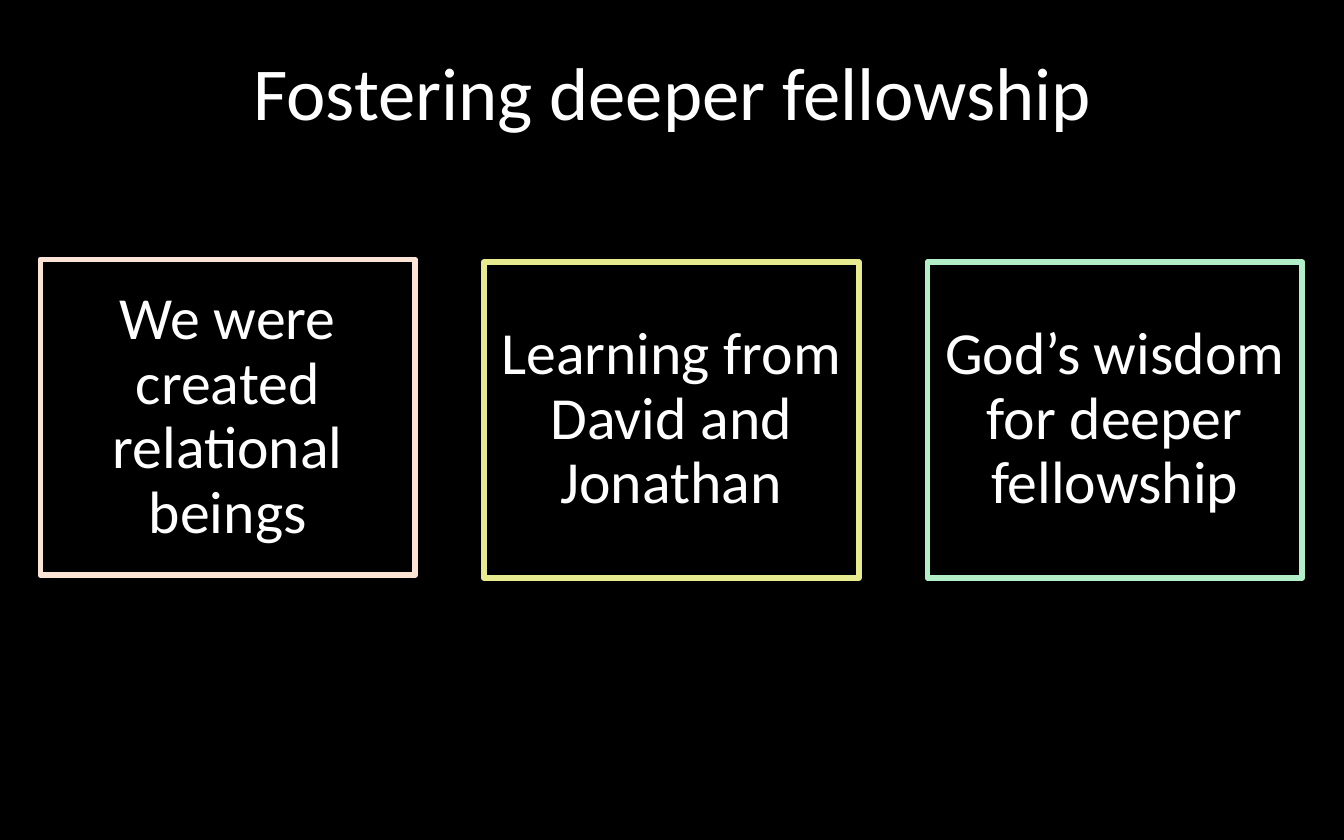
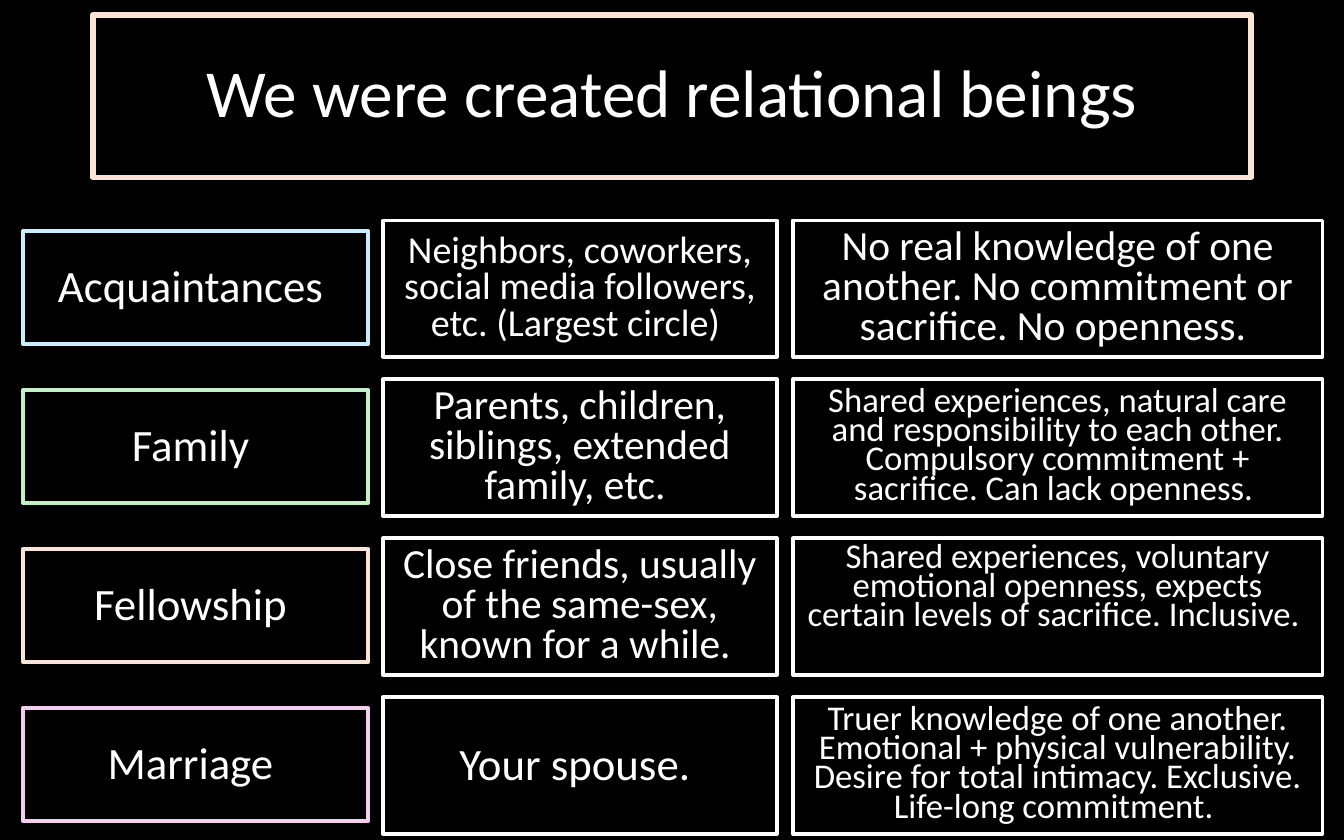
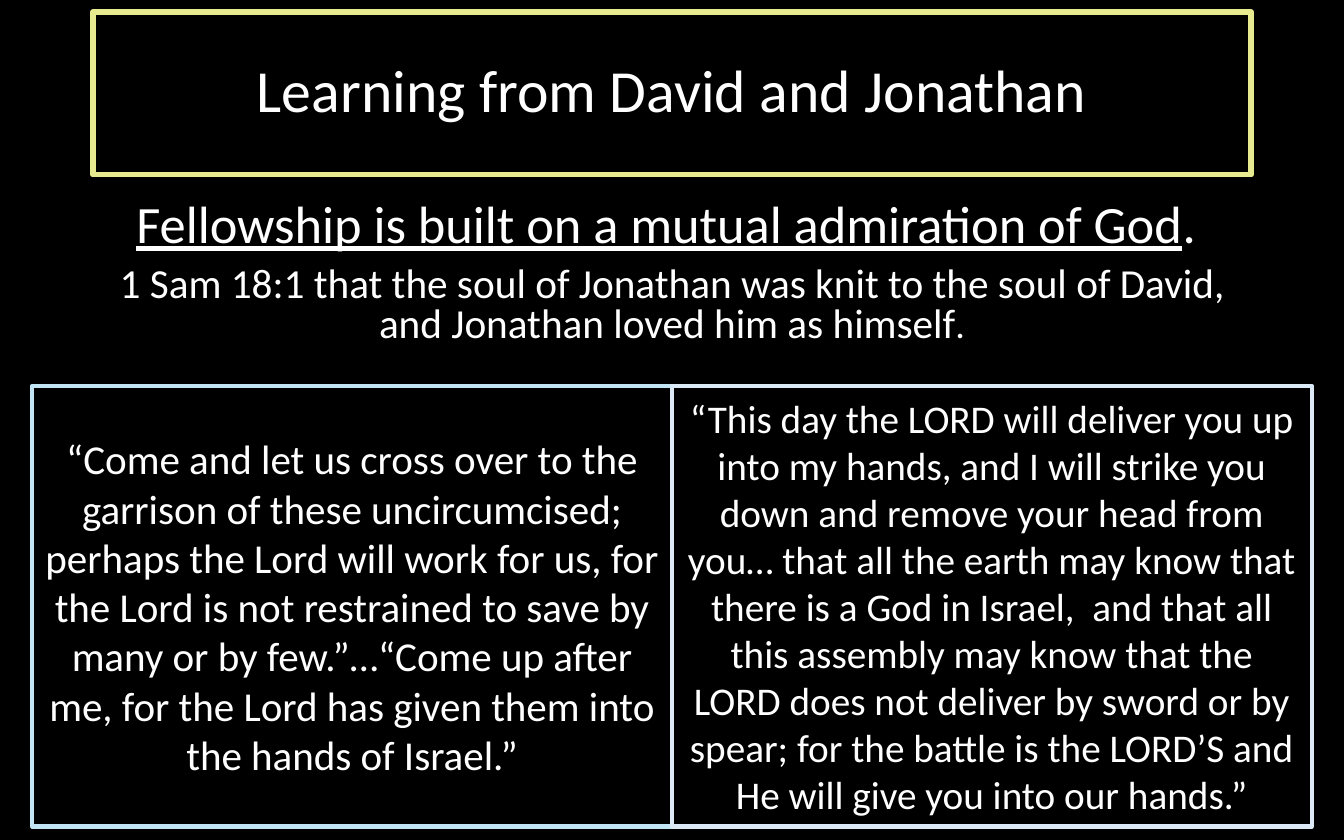
from dataclasses import dataclass
from typing import Optional

from lxml.etree import SubElement
from pptx import Presentation
from pptx.dml.color import RGBColor
from pptx.enum.shapes import MSO_SHAPE as Preset
from pptx.enum.text import MSO_ANCHOR as Anchor, MSO_AUTO_SIZE as AutoSize, PP_ALIGN as Align
from pptx.oxml.ns import qn
from pptx.util import Inches, Pt

COLORS = {
    "black": "000000",
    "white": "FFFFFF",
    "peach": "FBE3D6",
    "yellow": "E7EA8E",
    "mint": "B2EEC7",
    "sky": "CAEEFB",
    "green": "C2F1C8",
    "pink": "F2CFEE",
    "blue": "C1E5F5",
    "pale blue": "DCEAF7",
}
FONT = "Calibri"
WIDTH, HEIGHT = Inches(10), Inches(6.25)
COLUMNS, ROWS = 100, 62.5
TITLE_AND_CONTENT = 1


@dataclass(frozen=True)
class Frame:
    column: float
    row: float
    columns: float
    rows: float


@dataclass(frozen=True)
class Span:
    text: str
    size: float
    underline: bool = False


@dataclass(frozen=True)
class Panel:
    frame: Frame
    paragraphs: list[list[Span]]
    border: Optional[str] = None
    border_width: float = 2
    spacing: float = 0.9
    before: float = 7.5
    anchor: Anchor = Anchor.MIDDLE


@dataclass(frozen=True)
class Note:
    text: str
    size: float
    spacing: float
    anchor: Anchor = Anchor.MIDDLE


@dataclass(frozen=True)
class Circle:
    name: str
    color: str
    people: Note
    traits: Note


CIRCLES = [
    Circle(
        "Acquaintances ", "sky",
        Note("Neighbors, coworkers, social media followers, etc. (Largest circle) ", 20.4, 0.8),
        Note("No real knowledge of one another. No commitment or sacrifice. No openness. ", 22.2, 0.8),
    ),
    Circle(
        "Family ", "green",
        Note("Parents, children, siblings, extended family, etc. ", 22.2, 0.8),
        Note("Shared experiences, natural care and responsibility to each other. "
             "Compulsory commitment + sacrifice. Can lack openness. ", 18.6, 0.7),
    ),
    Circle(
        "Fellowship ", "peach",
        Note("Close friends, usually of the same-sex, known for a while. ", 22.2, 0.8),
        Note("Shared experiences, voluntary emotional openness, expects certain levels "
             "of sacrifice. Inclusive. ", 18.6, 0.7, Anchor.TOP),
    ),
    Circle(
        "Marriage ", "pink",
        Note("Your spouse. ", 24, 0.9),
        Note("Truer knowledge of one another. Emotional + physical vulnerability. "
             "Desire for total intimacy. Exclusive. Life-long commitment. ", 18.6, 0.7),
    ),
]


def write(shape, panel: Panel) -> None:
    frame = shape.text_frame
    frame.word_wrap = True
    frame.auto_size = AutoSize.NONE
    frame.vertical_anchor = panel.anchor
    frame.text = "\n".join(spans[0].text for spans in panel.paragraphs)
    for para, spans in zip(frame.paragraphs, panel.paragraphs):
        para.alignment = Align.CENTER
        para.line_spacing = panel.spacing
        para.space_before = Pt(panel.before)
        if shape.is_placeholder:
            properties = para._p.get_or_add_pPr()
            properties.set("marL", "0")
            properties.set("indent", "0")
            SubElement(properties, qn("a:buNone"))
        for span in spans[1:]:
            para.add_run().text = span.text
        for run, span in zip(para.runs, spans):
            run.font.name = FONT
            run.font.size = Pt(span.size)
            run.font.underline = span.underline
            run.font.color.rgb = RGBColor.from_string(COLORS["white"])


def draw(page, panel: Panel, holder=None) -> None:
    grid = panel.frame
    place = (
        int(WIDTH * grid.column / COLUMNS),
        int(HEIGHT * grid.row / ROWS),
        int(WIDTH * grid.columns / COLUMNS),
        int(HEIGHT * grid.rows / ROWS),
    )
    if holder is None:
        box = page.shapes.add_shape(Preset.RECTANGLE, *place)
        box.shadow.inherit = False
    else:
        box = holder
        box.left, box.top, box.width, box.height = place
    box.fill.background()
    if panel.border:
        box.line.color.rgb = RGBColor.from_string(COLORS[panel.border])
        box.line.width = Pt(panel.border_width)
    write(box, panel)


def add_page(deck, title: str, size: float, row: float = 1.1,
             border: Optional[str] = None, before: float = 7.5):
    page = deck.slides.add_slide(deck.slide_layouts[TITLE_AND_CONTENT])
    heading = Panel(Frame(6.9, row, 86.2, 12.1), [[Span(title, size)]], border, 3, before=before)
    draw(page, heading, page.shapes.title)
    return page


def draw_all(page, panels: list[Panel]) -> None:
    holders = [page.placeholders[1]] + [None] * (len(panels) - 1)
    for panel, holder in zip(panels, holders):
        draw(page, panel, holder)


def build_overview(deck) -> None:
    page = add_page(deck, "Fostering deeper fellowship", 40, before=0)
    topics = [
        ("We were created relational beings", "peach", 19.3),
        ("Learning from David and Jonathan", "yellow", 19.5),
        ("God’s wisdom for deeper fellowship", "mint", 19.5),
    ]
    draw_all(page, [
        Panel(Frame(3 + 33 * index, row, 27.9, 23.5), [[Span(text, 32)]], color, 3)
        for index, (text, color, row) in enumerate(topics)
    ])


def build_circles(deck) -> None:
    page = add_page(deck, "We were created relational beings", 36, border="peach")
    step = 11.83
    labels, details = [], []
    for index, circle in enumerate(CIRCLES):
        shift = index * step
        labels.append(Panel(Frame(1.7, 17.2 + shift, 25.7, 8.4),
                            [[Span(circle.name, 24)]], circle.color))
        for note, column, columns in ((circle.people, 28.5, 29.3), (circle.traits, 59, 39.4)):
            details.append(Panel(Frame(column, 16.4 + shift, columns, 10.15),
                                 [[Span(note.text, note.size)]], "white",
                                 spacing=note.spacing, anchor=note.anchor))
    draw_all(page, labels + details)


def build_friends(deck) -> None:
    page = add_page(deck, "Learning from David and Jonathan", 32, 0.9, "yellow")
    lesson = Panel(
        Frame(6.9, 14.6, 86.2, 12.1),
        [
            [Span("Fellowship is built on a mutual admiration of God", 28.1, True),
             Span(". ", 28.1)],
            [Span("1 Sam 18:1 that the soul of Jonathan was knit to the soul of David, "
                  "and Jonathan loved him as himself", 22.1),
             Span(".", 20.4)],
        ],
        spacing=0.8, anchor=Anchor.TOP,
    )
    quotes = [
        ("“Come and let us cross over to the garrison of these uncircumcised; "
         "perhaps the Lord will work for us, for the Lord is not restrained to save "
         "by many or by few.”…“Come up after me, for the Lord has given them into "
         "the hands of Israel.”", 22, "blue"),
        ("“This day the LORD will deliver you up into my hands, and I will strike you "
         "down and remove your head from you… that all the earth may know that there "
         "is a God in Israel,  and that all this assembly may know that the LORD does "
         "not deliver by sword or by spear; for the battle is the LORD’S and He will "
         "give you into our hands.”", 21, "pale blue"),
    ]
    draw_all(page, [lesson] + [
        Panel(Frame(2.4 + 47.6 * index, 28.7, 47.6, 32.8), [[Span(text, size)]],
              color, 2.25, spacing=1.0, before=0)
        for index, (text, size, color) in enumerate(quotes)
    ])


def main() -> None:
    deck = Presentation()
    deck.slide_width, deck.slide_height = WIDTH, HEIGHT
    backdrop = deck.slide_master.background.fill
    backdrop.solid()
    backdrop.fore_color.rgb = RGBColor.from_string(COLORS["black"])
    build_overview(deck)
    build_circles(deck)
    build_friends(deck)
    deck.save("out.pptx")


if __name__ == "__main__":
    main()
